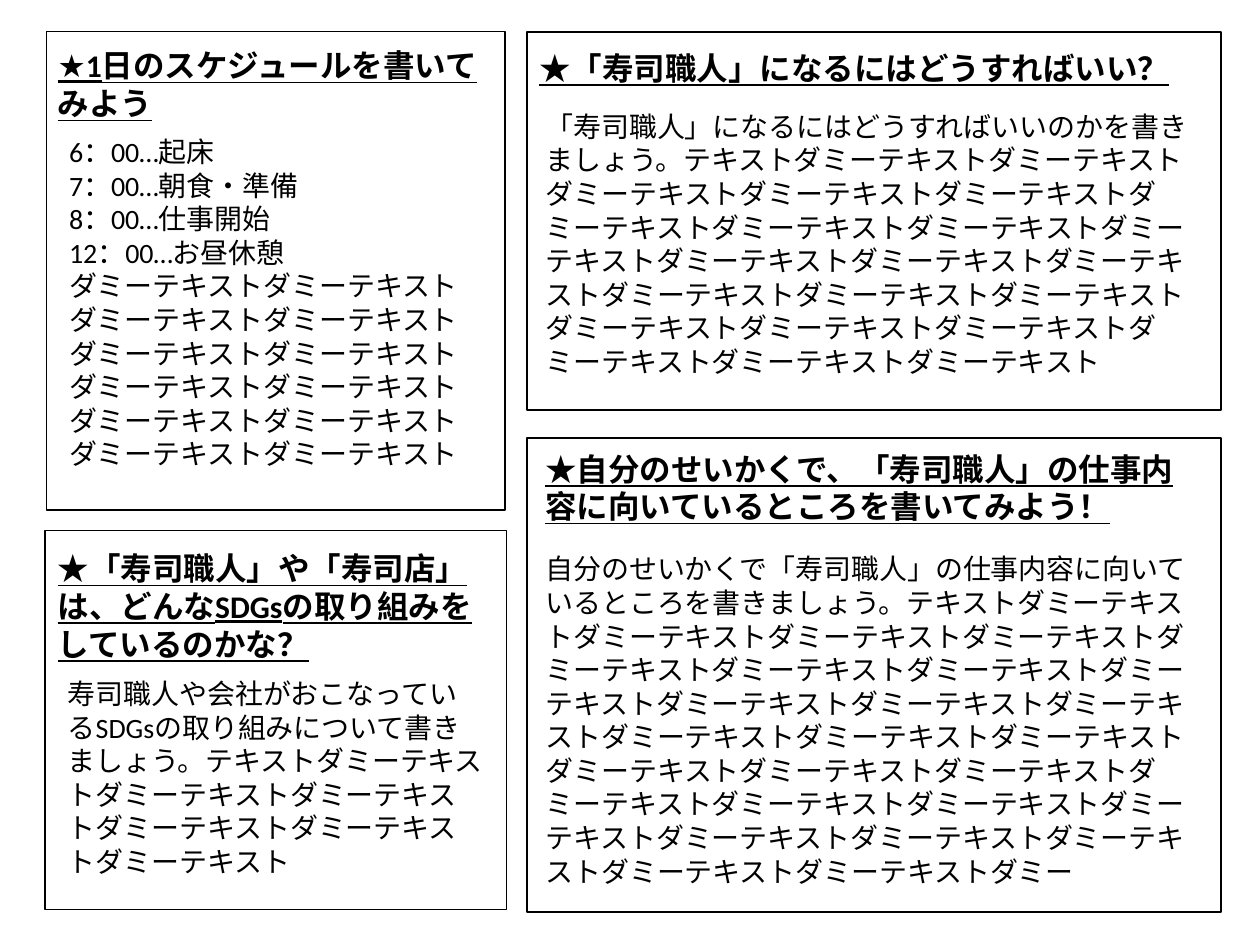
import pptx
import pptx.dml.color
import pptx.enum.shapes
import pptx.enum.text
import pptx.util

Pt = pptx.util.Pt
DUMMY = "テキストダミー"
DUMMY_LINE = "ダミーテキスト" * 2

# Each box is (left, top, width, height) in points;
# heading and body boxes are offset from the panel's top left corner.
PANELS = [
    {
        "frame": (26.6, 18, 262, 273.6),
        "heading_box": (-0.7, 5, 267.1, 51),
        "heading": "★1日のスケジュールを書いてみよう",
        "body_box": (5.8, 55.4, 252, 200.9),
        "body": ["6：00…起床", "7：00…朝食・準備", "8：00…仕事開始", "12：00…お昼休憩",
                 DUMMY_LINE * 2] + [DUMMY_LINE] * 4,
    },
    {
        "frame": (25.9, 303.1, 263.5, 216.7),
        "heading_box": (0, 7.2, 263.5, 72.7),
        "heading": "★「寿司職人」や「寿司店」は、どんなSDGsの取り組みをしているのかな？",
        "body_box": (5.8, 80, 252, 123.8),
        "body": ["寿司職人や会社がおこなっているSDGsの取り組みについて書きましょう。"
                 + DUMMY * 6 + "テキスト"],
    },
    {
        "frame": (301, 18.5, 396.7, 216),
        "heading_box": (0, 6, 427, 29),
        "heading": "★「寿司職人」になるにはどうすればいい？",
        "body_box": (3.6, 40.5, 388.1, 162.7),
        "body": ["「寿司職人」になるにはどうすればいいのかを書きましょう。"
                 + DUMMY * 21 + "テキスト"],
    },
    {
        "frame": (301, 250.3, 396.7, 270.7),
        "heading_box": (3.6, 3.1, 381.6, 51),
        "heading": "★自分のせいかくで、「寿司職人」の仕事内容に向いているところを書いてみよう！",
        "body_box": (3.6, 61.5, 388.1, 200.9),
        "body": ["自分のせいかくで「寿司職人」の仕事内容に向いているところを書きましょう。"
                 + DUMMY * 27],
    },
]


def color(value):
    return pptx.dml.color.RGBColor.from_string(value)


def add_rectangle(page, box):
    shape = page.shapes.add_shape(
        pptx.enum.shapes.MSO_SHAPE.RECTANGLE, *map(Pt, box))
    shape.shadow.inherit = False
    return shape


def write(shape, lines, size, heading=False):
    frame = shape.text_frame
    frame.word_wrap = True
    frame.auto_size = pptx.enum.text.MSO_AUTO_SIZE.SHAPE_TO_FIT_TEXT
    frame.vertical_anchor = pptx.enum.text.MSO_ANCHOR.TOP
    frame.text = "\n".join(lines)
    for para in frame.paragraphs:
        para.alignment = pptx.enum.text.PP_ALIGN.LEFT
        font = para.font
        font.name = "Calibri"
        font.size = Pt(size)
        font.color.rgb = color("000000")
        font.bold = heading
        font.underline = heading


def add_panel(page, panel):
    left, top = panel["frame"][:2]

    def inside(box):
        return left + box[0], top + box[1], box[2], box[3]

    border = add_rectangle(page, panel["frame"])
    border.fill.background()
    border.line.color.rgb = color("000000")
    border.line.width = Pt(1)

    heading = page.shapes.add_textbox(*map(Pt, inside(panel["heading_box"])))
    write(heading, [panel["heading"]], 18, heading=True)

    body = add_rectangle(page, inside(panel["body_box"]))
    body.fill.solid()
    body.fill.fore_color.rgb = color("FFFFFF")
    body.line.fill.background()
    write(body, panel["body"], 16)


def main():
    deck = pptx.Presentation()
    deck.slide_width, deck.slide_height = Pt(720), Pt(540)
    page = deck.slides.add_slide(deck.slide_layouts[6])
    for panel in PANELS:
        add_panel(page, panel)
    deck.save("out.pptx")


if __name__ == "__main__":
    main()
